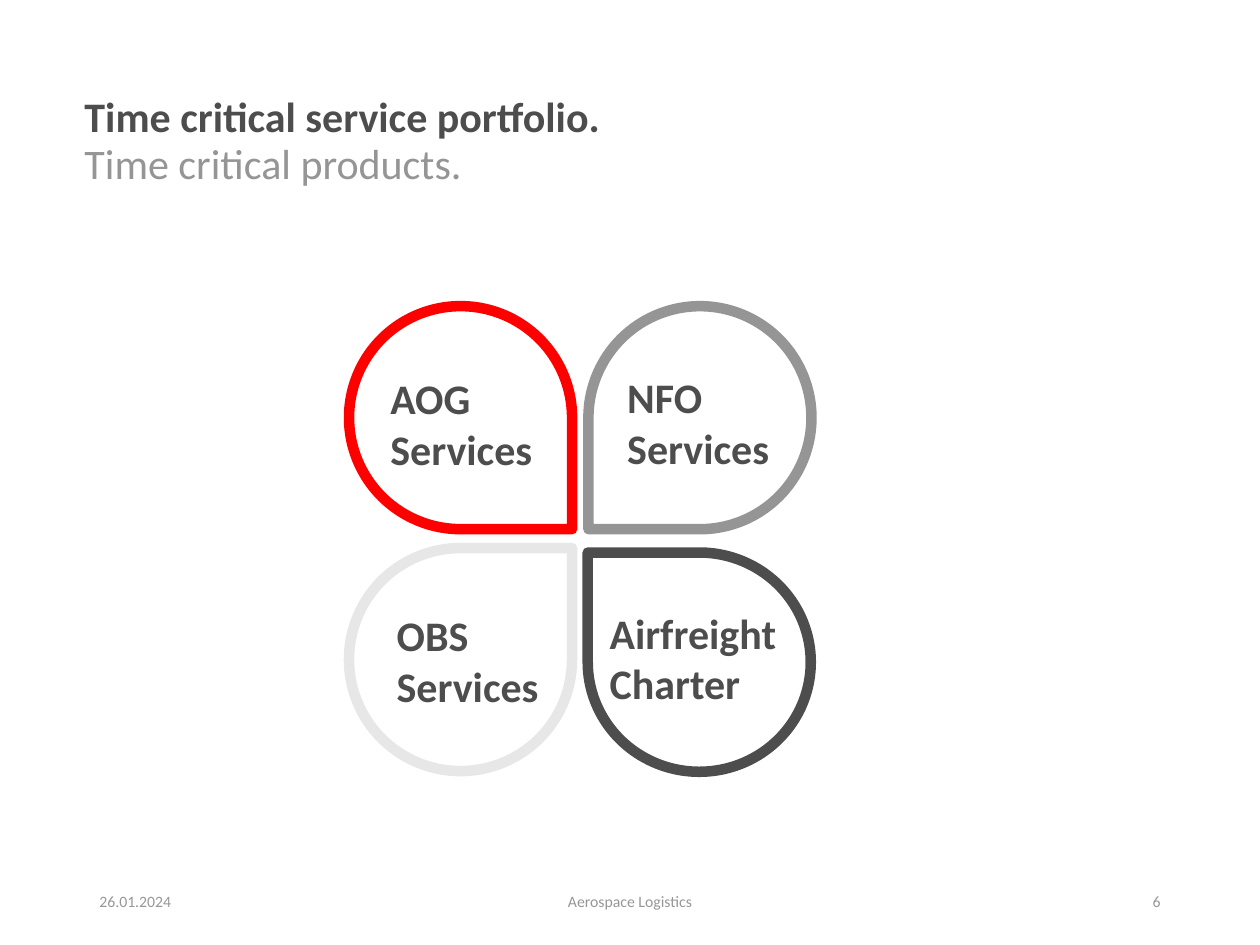
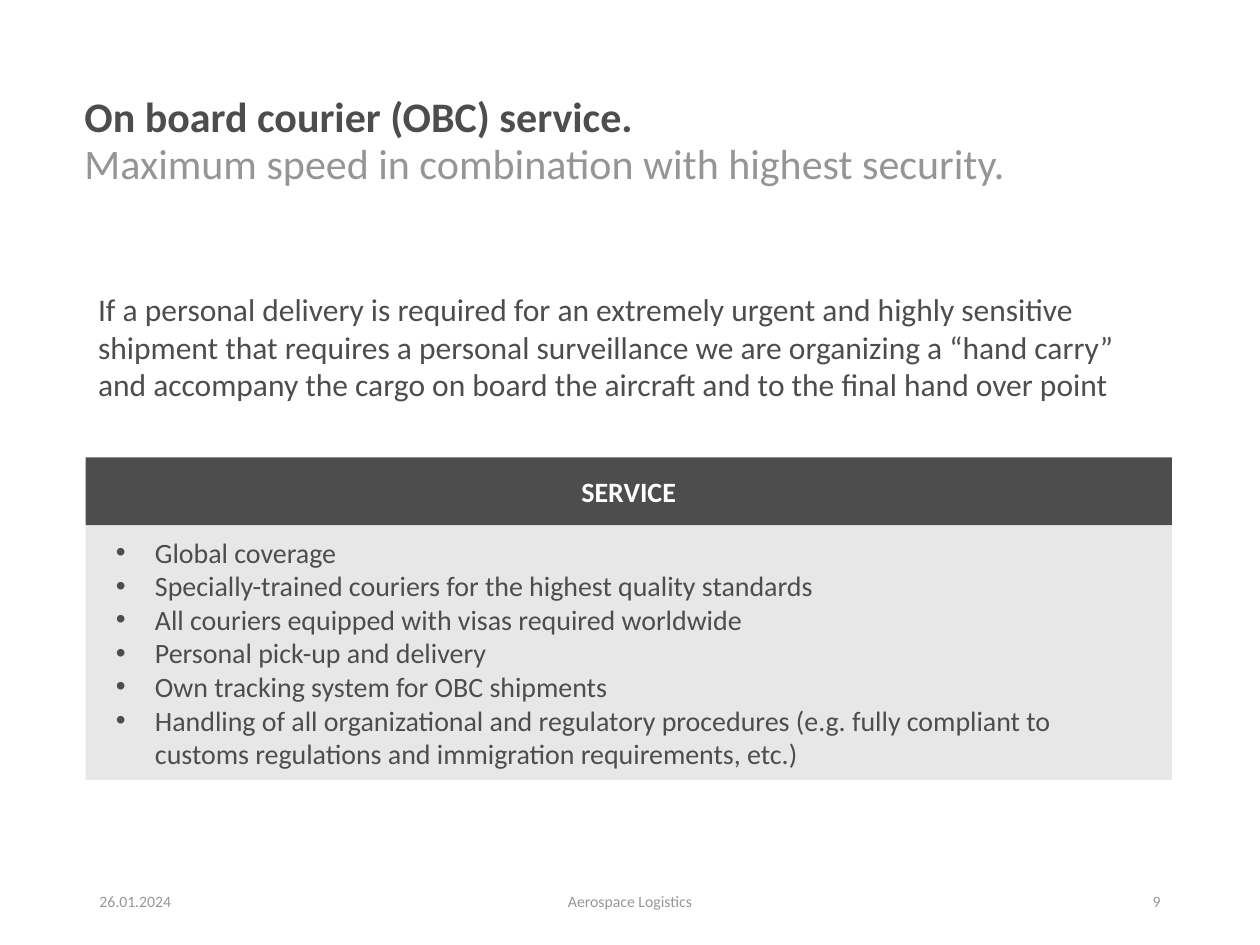
from lxml import etree
from pptx import Presentation
from pptx.dml.color import RGBColor
from pptx.enum.shapes import MSO_SHAPE
from pptx.enum.text import MSO_ANCHOR, PP_ALIGN
from pptx.oxml.ns import qn
from pptx.util import Inches, Pt

DARK = RGBColor(0x4D, 0x4D, 0x4D)
GREY = RGBColor(0x95, 0x95, 0x95)
FOOTER_GREY = RGBColor(0x97, 0x97, 0x97)
LIGHT = RGBColor(0xE7, 0xE7, 0xE7)
RED = RGBColor(0xFF, 0x00, 0x00)
WHITE = RGBColor(0xFF, 0xFF, 0xFF)

TOP, MIDDLE, BOTTOM = MSO_ANCHOR.TOP, MSO_ANCHOR.MIDDLE, MSO_ANCHOR.BOTTOM
LEFT, CENTER, RIGHT = PP_ALIGN.LEFT, PP_ALIGN.CENTER, PP_ALIGN.RIGHT
RECTANGLE, TEARDROP = MSO_SHAPE.RECTANGLE, MSO_SHAPE.TEAR

FONT = "Calibri"
DATE = "26.01.2024"
COMPANY = "Aerospace Logistics"

PORTFOLIO_BOX = (2.77, 2.43, 3.67, 3.71)
COURIER_BOX = (0.68, 2.25, 8.62, 3.94)

# Rotation, outline, petal offset and size, label, label offset and width
PETALS = [
    (90, RED, (0, 0, 1.77, 1.77), "AOG Services", (0.23, 0.48, 1.34)),
    (180, GREY, (1.9, 0, 1.77, 1.77), "NFO\nServices", (2.11, 0.47, 1.34)),
    (0, LIGHT, (0, 1.92, 1.77, 1.77), "OBS Services", (0.28, 2.36, 1.34)),
    (270, DARK, (1.91, 1.94, 1.74, 1.77), "Airfreight Charter", (1.97, 2.34, 1.61)),
]
LABEL_HEIGHT = 0.91

COURIER_INTRO = (
    "If a personal delivery is required for an extremely urgent and highly sensitive "
    "shipment that requires a personal surveillance we are organizing a “hand carry” "
    "and accompany the cargo on board the aircraft and to the final hand over point"
)
COURIER_SERVICES = [
    "Global coverage",
    "Specially-trained couriers for the highest quality standards",
    "All couriers equipped with visas required worldwide",
    "Personal pick-up and delivery",
    "Own tracking system for OBC shipments",
    "Handling of all organizational and regulatory procedures (e.g. fully compliant to "
    "customs regulations and immigration requirements, etc.)",
]


def add_bullet(para, indent):
    properties = para._p.get_or_add_pPr()
    properties.set("marL", str(Inches(indent)))
    properties.set("indent", str(-Inches(indent)))
    etree.SubElement(properties, qn("a:buFont")).set("typeface", "Arial")
    etree.SubElement(properties, qn("a:buChar")).set("char", "•")


def write(shape, text, size, color, bold=False, align=LEFT, anchor=TOP,
          insets=(0.1, 0.05), bullet_indent=None):
    """Fill a shape with text, one paragraph a line; insets are side and top/bottom."""
    frame = shape.text_frame
    frame.word_wrap = True
    frame.vertical_anchor = anchor
    frame.margin_left = frame.margin_right = Inches(insets[0])
    frame.margin_top = frame.margin_bottom = Inches(insets[1])
    frame.text = text
    for para in frame.paragraphs:
        if bullet_indent:
            add_bullet(para, bullet_indent)
        para.alignment = align
        para.font.name = FONT
        para.font.size = Pt(size)
        para.font.bold = bold
        para.font.color.rgb = color


def add_text(page, box, text, size, color, **style):
    write(page.shapes.add_textbox(*map(Inches, box)), text, size, color, **style)


def add_panel(page, box, fill):
    panel = page.shapes.add_shape(RECTANGLE, *map(Inches, box))
    panel.shadow.inherit = False
    panel.fill.solid()
    panel.fill.fore_color.rgb = fill
    panel.line.fill.background()
    return panel


def add_petal(page, box, rotation, color):
    petal = page.shapes.add_shape(TEARDROP, *map(Inches, box))
    petal.rotation = rotation
    petal.shadow.inherit = False
    petal.fill.background()
    petal.line.color.rgb = color
    petal.line.width = Pt(6)


def add_page(deck, title, subtitle, number):
    """Add a blank slide with the shared heading and footer."""
    page = deck.slides.add_slide(deck.slide_layouts[6])
    heading = {"anchor": BOTTOM, "insets": (0, 0)}
    add_text(page, (0.67, 0.77, 7.48, 0.35), title, 24, DARK, bold=True, **heading)
    add_text(page, (0.67, 1.13, 7.48, 0.36), subtitle, 24, GREY, **heading)
    footers = [
        (0.69, 2.25, DATE, LEFT),
        (3.31, 3.38, COMPANY, CENTER),
        (7.06, 2.25, str(number), RIGHT),
    ]
    for left, width, text, align in footers:
        add_text(page, (left, 6.95, width, 0.4), text, 9, FOOTER_GREY,
                 align=align, anchor=MIDDLE)
    return page


def add_portfolio(page, box):
    left, top = box[:2]
    for rotation, color, (x, y, width, height), _, _ in PETALS:
        add_petal(page, (left + x, top + y, width, height), rotation, color)
    for _, _, _, label, (x, y, width) in PETALS:
        add_text(page, (left + x, top + y, width, LABEL_HEIGHT), label, 24, DARK, bold=True)


def add_courier_service(page, box):
    left, top, width, height = box
    header_top, list_top = 1.38, 1.92
    header = add_panel(page, (left, top + header_top, width, list_top - header_top), DARK)
    write(header, "SERVICE", 16, WHITE, bold=True, align=CENTER, anchor=MIDDLE)
    services = add_panel(page, (left, top + list_top, width, height - list_top), LIGHT)
    write(services, "\n".join(COURIER_SERVICES), 16, DARK, anchor=MIDDLE,
          insets=(0.24, 0.05), bullet_indent=0.31)
    add_text(page, (left, top, width, 1.01), COURIER_INTRO, 18, DARK)


def main():
    deck = Presentation()
    deck.slide_width = Inches(10)
    deck.slide_height = Inches(7.5)
    portfolio = add_page(deck, "Time critical service portfolio.",
                         "Time critical products.", 6)
    add_portfolio(portfolio, PORTFOLIO_BOX)
    courier = add_page(deck, "On board courier (OBC) service.",
                       "Maximum speed in combination with highest security.", 9)
    add_courier_service(courier, COURIER_BOX)
    deck.save("out.pptx")


if __name__ == "__main__":
    main()
